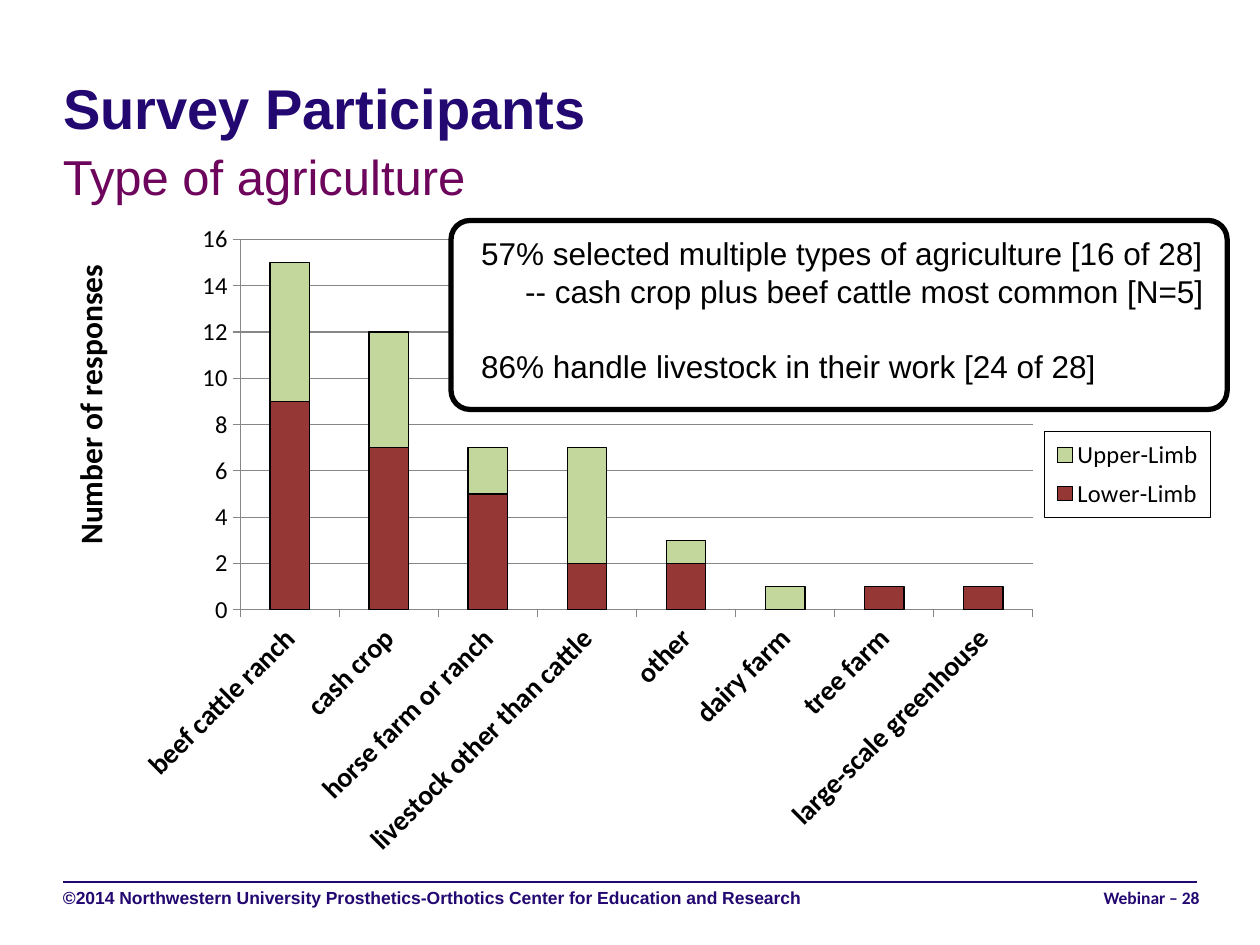
"""Build the survey participants slide with a stacked column chart."""
from lxml import etree
from pptx import Presentation
from pptx.chart.data import CategoryChartData
from pptx.dml.color import RGBColor
from pptx.enum.chart import XL_CHART_TYPE, XL_LEGEND_POSITION, XL_TICK_MARK
from pptx.enum.shapes import MSO_CONNECTOR, MSO_SHAPE
from pptx.enum.text import MSO_ANCHOR, PP_ALIGN
from pptx.oxml.ns import qn
from pptx.util import Pt

PX = 9144
STACKED = XL_CHART_TYPE.COLUMN_STACKED
LEGEND_RIGHT = XL_LEGEND_POSITION.RIGHT
TICK_OUT = XL_TICK_MARK.OUTSIDE
STRAIGHT = MSO_CONNECTOR.STRAIGHT
ROUNDED = MSO_SHAPE.ROUNDED_RECTANGLE
TOP, MIDDLE = MSO_ANCHOR.TOP, MSO_ANCHOR.MIDDLE
LEFT, RIGHT = PP_ALIGN.LEFT, PP_ALIGN.RIGHT

NAVY = RGBColor(0x23, 0x08, 0x72)
PLUM = RGBColor(0x6E, 0x05, 0x5C)
BLACK = RGBColor(0, 0, 0)
WHITE = RGBColor(0xFF, 0xFF, 0xFF)
GRAY = RGBColor(0x87, 0x87, 0x87)
DARK_RED = RGBColor(0x95, 0x37, 0x35)
LIGHT_GREEN = RGBColor(0xC3, 0xD6, 0x9B)


def write_text(shape, lines, margins, anchor, font, size, color, bold=False, align=LEFT):
    frame = shape.text_frame
    frame.word_wrap = True
    frame.vertical_anchor = anchor
    for side, margin in zip(("left", "top", "right", "bottom"), margins):
        setattr(frame, f"margin_{side}", margin * PX)
    frame.text = "\n".join(lines)
    for paragraph in frame.paragraphs:
        paragraph.alignment = align
        formats = {"name": font, "size": Pt(size), "bold": bold}
        for name, value in formats.items():
            setattr(paragraph.font, name, value)
        paragraph.font.color.rgb = color


def place_in_chart(parent, index, **fractions):
    for old_layout in parent.findall(qn("c:layout")):
        parent.remove(old_layout)
    layout = etree.Element(qn("c:layout"))
    manual = etree.SubElement(layout, qn("c:manualLayout"))
    if "plotArea" in parent.tag:
        etree.SubElement(manual, qn("c:layoutTarget")).set("val", "inner")
    for mode in ("xMode", "yMode"):
        etree.SubElement(manual, qn(f"c:{mode}")).set("val", "edge")
    for name, value in fractions.items():
        etree.SubElement(manual, qn(f"c:{name}")).set("val", str(value))
    parent.insert(index, layout)


presentation = Presentation()
presentation.slide_width = 1000 * PX
presentation.slide_height = 750 * PX
slide = presentation.slides.add_slide(presentation.slide_layouts[5])
shapes = slide.shapes

rule = shapes.add_connector(STRAIGHT, 50 * PX, 700 * PX, 950 * PX, 700 * PX)
rule.line.color.rgb = NAVY
rule.line.width = Pt(1)
etree.SubElement(rule.element.spPr, qn("a:effectLst"))

title = shapes.title
title.left, title.top, title.width, title.height = (value * PX for value in (50, 58, 900, 54))
write_text(title, ["Survey Participants"], (0, 0, 0, 0), MIDDLE, "Arial", 32, NAVY, True)

footer_margins = (0, 3, 0, 0)
labels = [
    ((50, 701, 667, 40), "©2014 Northwestern University Prosthetics-Orthotics Center for Education and Research",
     footer_margins, "Arial", 10, NAVY, True, LEFT),
    ((719, 701, 233, 40), "Webinar – 28", footer_margins, "Calibri", 10, NAVY, True, RIGHT),
    ((40, 111, 345, 57), "Type of agriculture", (10, 5, 10, 5), "Arial", 28, PLUM, False, LEFT),
]
for box, text, margins, *style in labels:
    label = shapes.add_textbox(*(value * PX for value in box))
    write_text(label, [text], margins, TOP, *style)

chart_data = CategoryChartData()
chart_data.categories = [
    "beef cattle ranch", "cash crop", "horse farm or ranch", "livestock other than cattle",
    "other", "dairy farm", "tree farm", "large-scale greenhouse",
]
chart_data.add_series("Lower-Limb", (9, 7, 5, 2, 2, 0, 1, 1))
chart_data.add_series("Upper-Limb", (6, 5, 2, 5, 1, 1, 0, 0))
chart = shapes.add_chart(STACKED, 31 * PX, 169 * PX, 939 * PX, 525 * PX, chart_data).chart
chart.has_title = False
chart.font.name = "Calibri"
chart.font.size = Pt(10)
chart.font.color.rgb = BLACK

plot = chart.plots[0]
plot.gap_width, plot.overlap, plot.vary_by_categories = 150, 100, False
for series, color in zip(plot.series, (DARK_RED, LIGHT_GREEN)):
    series.format.fill.solid()
    series.format.fill.fore_color.rgb = color
    series.format.line.color.rgb = BLACK
    series.format.line.width = Pt(0.75)

category_axis, value_axis = chart.category_axis, chart.value_axis
for axis, size, bold in ((category_axis, 16, True), (value_axis, 14, False)):
    axis.major_tick_mark = TICK_OUT
    axis.tick_labels.font.size = Pt(size)
    axis.tick_labels.font.bold = bold
    axis.format.line.color.rgb = GRAY
value_axis.minimum_scale, value_axis.maximum_scale, value_axis.major_unit = 0, 16, 2
value_axis.has_major_gridlines = True
value_axis.major_gridlines.format.line.color.rgb = GRAY

title_frame = value_axis.axis_title.text_frame
title_frame.text = "Number of responses"
title_font = title_frame.paragraphs[0].runs[0].font
for name, value in {"name": "Calibri", "size": Pt(18), "bold": True}.items():
    setattr(title_font, name, value)
title_font.color.rgb = BLACK

chart.has_legend = True
legend = chart.legend
legend.position = LEGEND_RIGHT
legend.include_in_layout = False
legend.font.size = Pt(14)

plot_area = chart.element.find(".//" + qn("c:plotArea"))
legend_element = chart.element.find(".//" + qn("c:legend"))
axis_title = plot_area.find(qn("c:valAx")).find(qn("c:title"))
place_in_chart(plot_area, 0, x=0.17, y=0.04, w=0.67, h=0.56)
place_in_chart(legend_element, 1, x=0.85, y=0.33, w=0.14, h=0.13)
place_in_chart(axis_title, 1, x=0.02, y=0.07)

category_text = plot_area.find(qn("c:catAx")).find(qn("c:txPr"))
for text_body, degrees in ((category_text, -45), (axis_title, -90)):
    body = text_body.find(".//" + qn("a:bodyPr"))
    body.set("rot", str(degrees * 60000))
    body.set("vert", "horz")

legend_border = etree.Element(qn("c:spPr"))
border_line = etree.SubElement(legend_border, qn("a:ln"), w=str(Pt(0.75)))
border_fill = etree.SubElement(border_line, qn("a:solidFill"))
etree.SubElement(border_fill, qn("a:srgbClr"), val=str(BLACK))
legend_element.find(qn("c:overlay")).addnext(legend_border)

group = shapes.add_group_shape()
callout = group.shapes.add_shape(ROUNDED, 358 * PX, 175 * PX, 616 * PX, 150 * PX)
callout.adjustments[0] = 0.1
callout.shadow.inherit = False
callout.fill.solid()
callout.fill.fore_color.rgb = WHITE
callout.line.color.rgb = BLACK
callout.line.width = Pt(3)

findings = group.shapes.add_textbox(372 * PX, 181 * PX, 605 * PX, 131 * PX)
write_text(findings, [
    "57% selected multiple types of agriculture [16 of 28]",
    "-- cash crop plus beef cattle most common [N=5]",
    "86% handle livestock in their work [24 of 28]",
], (10, 5, 10, 5), TOP, "Arial", 18, BLACK)
detail, livestock = findings.text_frame.paragraphs[1:]
detail_properties = detail._p.get_or_add_pPr()
detail_properties.set("marL", str(35 * PX))
detail_properties.set("indent", "0")
livestock.space_before = Pt(21)

presentation.save("out.pptx")
